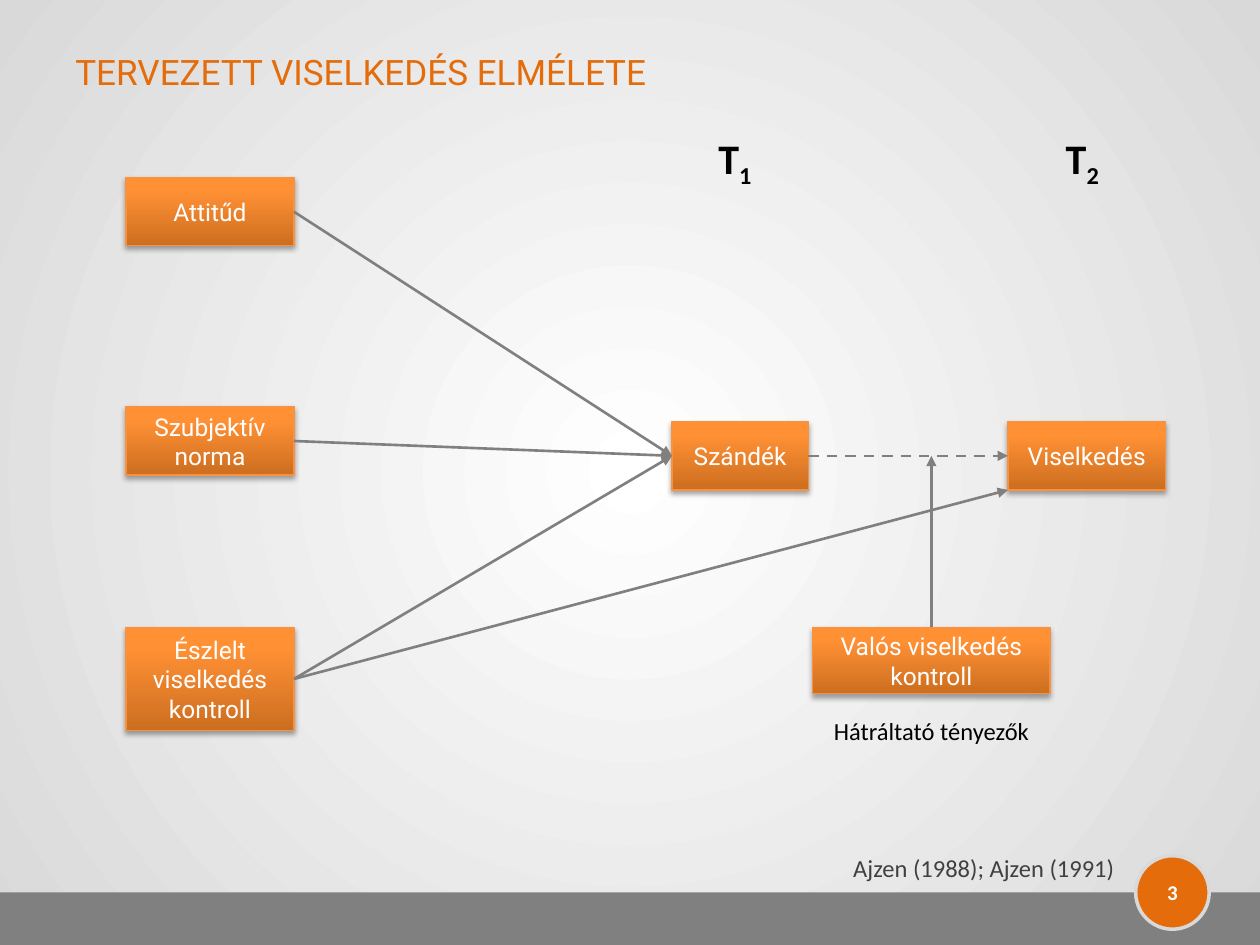
import pptx
import pptx.util
import pptx.dml.color
import pptx.enum.dml
import pptx.enum.shapes
import pptx.enum.text
import pptx.oxml
import pptx.oxml.ns
import lxml.etree

Pt = pptx.util.Pt
RGBColor = pptx.dml.color.RGBColor
qn = pptx.oxml.ns.qn
PP_ALIGN = pptx.enum.text.PP_ALIGN
MSO_ANCHOR = pptx.enum.text.MSO_ANCHOR
MSO_SHAPE = pptx.enum.shapes.MSO_SHAPE

WHITE = RGBColor(0xFF, 0xFF, 0xFF)
BLACK = RGBColor(0x00, 0x00, 0x00)
LIGHT_GREY = RGBColor(0xD9, 0xD9, 0xD9)
GREY = RGBColor(0x80, 0x80, 0x80)
DARK_GREY = RGBColor(0x40, 0x40, 0x40)
ORANGE = RGBColor(0xE4, 0x6C, 0x0A)
BOX_LINE = RGBColor(0xF6, 0x92, 0x40)
BOX_STOPS = [
    (0, RGBColor(0xCC, 0x6E, 0x20)),
    (80, RGBColor(0xFF, 0x90, 0x34)),
    (100, RGBColor(0xFF, 0x91, 0x36)),
]

TITLE_FONT = {"name": "Roboto", "size": Pt(20)}
BOX_FONT = {"name": "Roboto", "size": Pt(14)}
NOTE_FONT = {"name": "Calibri", "size": Pt(14)}
TIME_FONT = {"name": "Calibri", "size": Pt(24), "bold": True}
NUMBER_FONT = {"name": "Calibri", "size": Pt(12), "bold": True}

TOP, LEFT, RIGHT = 0, 1, 3  # connection sites of a rectangle


def add_xml(parent, tag, **attributes):
    values = {name: str(value) for name, value in attributes.items()}
    return lxml.etree.SubElement(parent, qn(tag), values)


def set_gradient(fill, owner, stops, angle=None):
    """Fill with stops along an angle, or in circles from the centre without one."""
    fill.gradient()
    gradient = owner.find(".//" + qn("a:gradFill"))
    for child in list(gradient):
        gradient.remove(child)
    stop_list = add_xml(gradient, "a:gsLst")
    for position, color in stops:
        stop = add_xml(stop_list, "a:gs", pos=position * 1000)
        add_xml(stop, "a:srgbClr", val=color)
    if angle is None:
        circle = add_xml(gradient, "a:path", path="circle")
        add_xml(circle, "a:fillToRect", l=50000, t=50000, r=50000, b=50000)
    else:
        add_xml(gradient, "a:lin", ang=angle * 60000, scaled=0)


def add_shadow(shape):
    effects = shape._element.spPr.find(qn("a:effectLst"))
    shadow = add_xml(effects, "a:outerShdw", blurRad=Pt(3.1), dist=Pt(1.8),
                     dir=90 * 60000, algn="ctr", rotWithShape=0)
    color = add_xml(shadow, "a:srgbClr", val=BLACK)
    add_xml(color, "a:alpha", val=35000)


def add_run(paragraph, text, font, color):
    run = paragraph.add_run()
    run.text = text
    for name, value in font.items():
        setattr(run.font, name, value)
    run.font.color.rgb = color
    return run


def write(shape, text, font, color, align=PP_ALIGN.CENTER, anchor=MSO_ANCHOR.MIDDLE):
    frame = shape.text_frame
    frame.word_wrap = True
    frame.vertical_anchor = anchor
    paragraph = frame.paragraphs[0]
    paragraph.alignment = align
    add_run(paragraph, text, font, color)
    return paragraph


def add_text(slide, box, *text_format):
    textbox = slide.shapes.add_textbox(*map(Pt, box))
    return write(textbox, *text_format)


def add_plain_shape(slide, kind, box, color):
    shape = slide.shapes.add_shape(kind, *map(Pt, box))
    shape.shadow.inherit = False
    shape.fill.solid()
    shape.fill.fore_color.rgb = color
    shape.line.fill.background()
    return shape


def add_footer(slide, box, number):
    left, top, width, height = box
    add_plain_shape(slide, MSO_SHAPE.RECTANGLE, box, GREY)
    size = 42
    badge_left = left + width - 71
    badge = add_plain_shape(slide, MSO_SHAPE.OVAL,
                            (badge_left, top - size / 2, size, size), ORANGE)
    badge.line.color.rgb = LIGHT_GREY
    badge.line.width = Pt(2)
    add_text(slide, (badge_left, top - 14.5, size, 29), number, NUMBER_FONT, WHITE)


def add_concept(slide, text, box):
    shape = slide.shapes.add_shape(MSO_SHAPE.RECTANGLE, *map(Pt, box))
    shape.shadow.inherit = False
    set_gradient(shape.fill, shape._element.spPr, BOX_STOPS, 270)
    shape.line.color.rgb = BOX_LINE
    shape.line.width = Pt(0.75)
    add_shadow(shape)
    write(shape, text, BOX_FONT, WHITE)
    return shape


def add_arrow(slide, start, start_site, end, end_site=None, dashed=False):
    """Join two shapes; the end may also be a bare (x, y) point."""
    target = end if end_site is None else (0, 0)
    arrow = slide.shapes.add_connector(
        pptx.enum.shapes.MSO_CONNECTOR.STRAIGHT, 0, 0, *target)
    arrow.begin_connect(start, start_site)
    if end_site is not None:
        arrow.end_connect(end, end_site)
    arrow.line.color.rgb = GREY
    arrow.line.width = Pt(1.5)
    if dashed:
        arrow.line.dash_style = pptx.enum.dml.MSO_LINE.DASH
    add_xml(arrow.line._get_or_add_ln(), "a:tailEnd", type="triangle")
    add_xml(arrow._element.spPr, "a:effectLst")


def add_time_label(slide, box, index):
    paragraph = add_text(slide, box, "T", TIME_FONT, BLACK,
                         PP_ALIGN.CENTER, MSO_ANCHOR.TOP)
    subscript = add_run(paragraph, index, TIME_FONT, BLACK)
    subscript.font._element.set("baseline", "-25000")


def add_model(slide, box):
    left, top, width, height = box
    outcome_top = top + 139.5
    control_top = top + 257
    intention = add_concept(slide, "Szándék", (left + 312, outcome_top, 78, 39))
    behaviour = add_concept(slide, "Viselkedés",
                            (left + width - 90, outcome_top, 90, 39))
    causes = [
        add_concept(slide, text, (left, cause_top, 96, cause_height))
        for text, cause_top, cause_height in [
            ("Attitűd", top, 39),
            ("Szubjektív norma", top + 131, 39),
            ("Észlelt viselkedés kontroll", control_top, 59),
        ]
    ]
    actual_left, actual_width = left + 392.5, 135.5
    actual = add_concept(slide, "Valós viselkedés kontroll",
                         (actual_left, control_top, actual_width, 38))
    add_text(slide, (actual_left, control_top + 47, actual_width, 24),
             "Hátráltató tényezők", NOTE_FONT, BLACK, PP_ALIGN.CENTER, MSO_ANCHOR.TOP)

    for cause in causes:
        add_arrow(slide, cause, RIGHT, intention, LEFT)
    add_arrow(slide, intention, RIGHT, behaviour, LEFT, dashed=True)
    add_arrow(slide, actual, TOP, (actual.left + actual.width // 2,
                                   behaviour.top + behaviour.height // 2))
    add_arrow(slide, causes[-1], RIGHT,
              (behaviour.left, behaviour.top + behaviour.height))


def main():
    presentation = pptx.Presentation()
    presentation.slide_width, presentation.slide_height = Pt(720), Pt(540)
    slide = presentation.slides.add_slide(presentation.slide_layouts[6])
    set_gradient(slide.background.fill, slide._element, [(0, WHITE), (100, LIGHT_GREY)])
    add_footer(slide, (0, 510, 720, 30), "3")
    add_text(slide, (36, 22, 648, 38), "TERVEZETT VISELKEDÉS ELMÉLETE",
             TITLE_FONT, ORANGE, PP_ALIGN.LEFT)
    add_model(slide, (72, 101.5, 594, 316))
    for label_left, index in [(384, "1"), (582.5, "2")]:
        add_time_label(slide, (label_left, 72, 72, 36), index)
    add_text(slide, (380, 484, 264, 24), "Ajzen (1988); Ajzen (1991)",
             NOTE_FONT, DARK_GREY, PP_ALIGN.RIGHT, MSO_ANCHOR.TOP)
    presentation.save("out.pptx")


if __name__ == "__main__":
    main()
